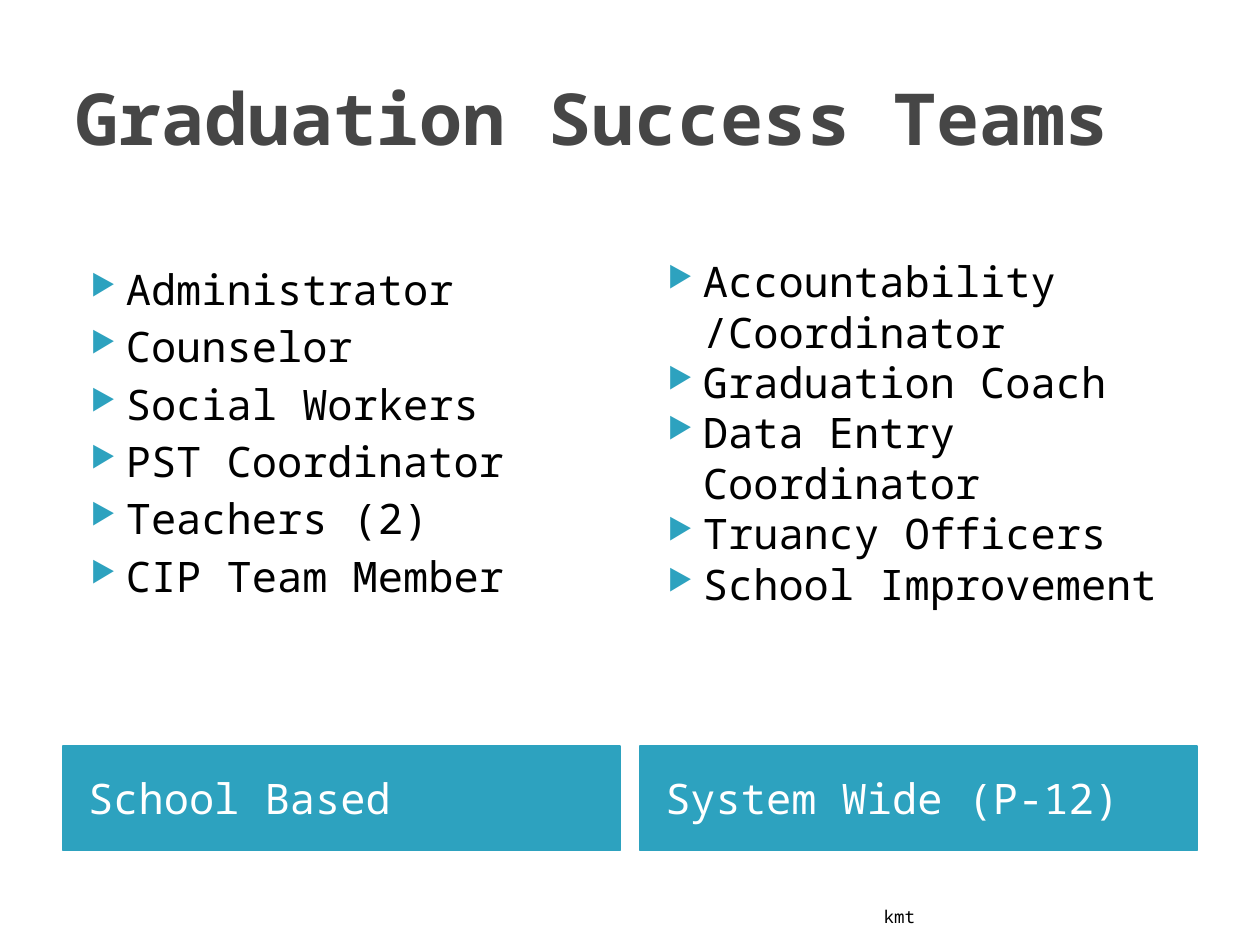
from dataclasses import dataclass

from lxml.etree import SubElement
from pptx import Presentation
from pptx.dml.color import RGBColor as Color
from pptx.enum.shapes import MSO_SHAPE as Preset
from pptx.enum.text import MSO_ANCHOR as Anchor, PP_ALIGN as Align
from pptx.oxml.ns import qn
from pptx.util import Inches, Pt


@dataclass(frozen=True)
class Theme:
    font: str = "Noto Sans Mono"
    title_color: str = "464646"
    text_color: str = "000000"
    accent: str = "2DA2BF"
    on_accent: str = "FFFFFF"
    title_size: int = 41
    body_size: int = 24
    footer_size: int = 10


THEME = Theme()
WIDTH, HEIGHT = 10, 7.5
MARGIN, GUTTER = 0.5, 0.16
COLUMN_WIDTH = (WIDTH - 2 * MARGIN - GUTTER) / 2
LIST_TOP, LIST_HEIGHT = 1.58, 4.31
BAND_TOP, BAND_HEIGHT = 5.92, 0.83

# Label, items, space above the list, space before each item
TEAMS = [
    ("School Based",
     ["Administrator", "Counselor", "Social Workers", "PST Coordinator",
      "Teachers (2)", "CIP Team Member"], 0.51, 4),
    ("System Wide (P-12)",
     ["Accountability /Coordinator", "Graduation Coach",
      "Data Entry Coordinator", "Truancy Officers", "School Improvement"],
     0.45, 0),
]


def add_bullet(paragraph):
    properties = paragraph._p.get_or_add_pPr()
    properties.set("marL", str(Inches(0.4)))
    properties.set("indent", str(Inches(-0.28)))
    color = SubElement(properties, qn("a:buClr"))
    SubElement(color, qn("a:srgbClr"), val=THEME.accent)
    SubElement(properties, qn("a:buSzPct"), val="68000")
    SubElement(properties, qn("a:buChar"), char="▶")


def write(shape, lines, size, color, bold=False, align=Align.LEFT,
          bullets=False, gap=0, **frame_format):
    frame = shape.text_frame
    for name, value in {"word_wrap": True, **frame_format}.items():
        setattr(frame, name, value)
    for index, line in enumerate(lines):
        paragraph = frame.paragraphs[0] if index == 0 else frame.add_paragraph()
        paragraph.text = line
        paragraph.alignment = align
        paragraph.space_before = Pt(gap if index else 0)
        if bullets:
            add_bullet(paragraph)
        font = paragraph.runs[0].font
        font.color.rgb = Color.from_string(color)
        for name, value in {"name": THEME.font, "size": Pt(size),
                            "bold": bold}.items():
            setattr(font, name, value)


def add_text(slide, box, lines, size, color, **options):
    shape = slide.shapes.add_textbox(*map(Inches, box))
    write(shape, lines, size, color, **options)


def add_band(slide, box, label):
    band = slide.shapes.add_shape(Preset.RECTANGLE, *map(Inches, box))
    band.shadow.inherit = False
    accent = Color.from_string(THEME.accent)
    band.fill.solid()
    band.fill.fore_color.rgb = accent
    band.line.color.rgb = accent
    band.line.width = Pt(0.75)
    write(band, [label], THEME.body_size, THEME.on_accent,
          vertical_anchor=Anchor.MIDDLE, margin_left=Inches(0.2))


def add_team(slide, left, label, items, top_space, gap):
    # Member list above its label band
    add_text(slide, (left, LIST_TOP, COLUMN_WIDTH, LIST_HEIGHT), items,
             THEME.body_size, THEME.text_color, bullets=True, gap=gap,
             margin_top=Inches(top_space))
    add_band(slide, (left, BAND_TOP, COLUMN_WIDTH, BAND_HEIGHT), label)


def main():
    presentation = Presentation()
    presentation.slide_width = Inches(WIDTH)
    presentation.slide_height = Inches(HEIGHT)
    slide = presentation.slides.add_slide(presentation.slide_layouts[6])

    # Title
    add_text(slide, (MARGIN, 0.3, WIDTH - 2 * MARGIN, 1.25),
             ["Graduation Success Teams"], THEME.title_size,
             THEME.title_color, bold=True, vertical_anchor=Anchor.MIDDLE)

    # Team columns
    for column, team in enumerate(TEAMS):
        add_team(slide, MARGIN + column * (COLUMN_WIDTH + GUTTER), *team)

    # Footer
    add_text(slide, (4.79, 7.01, 2.57, 0.4), ["kmt"], THEME.footer_size,
             THEME.text_color, align=Align.RIGHT,
             vertical_anchor=Anchor.BOTTOM)

    presentation.save("out.pptx")


if __name__ == "__main__":
    main()
